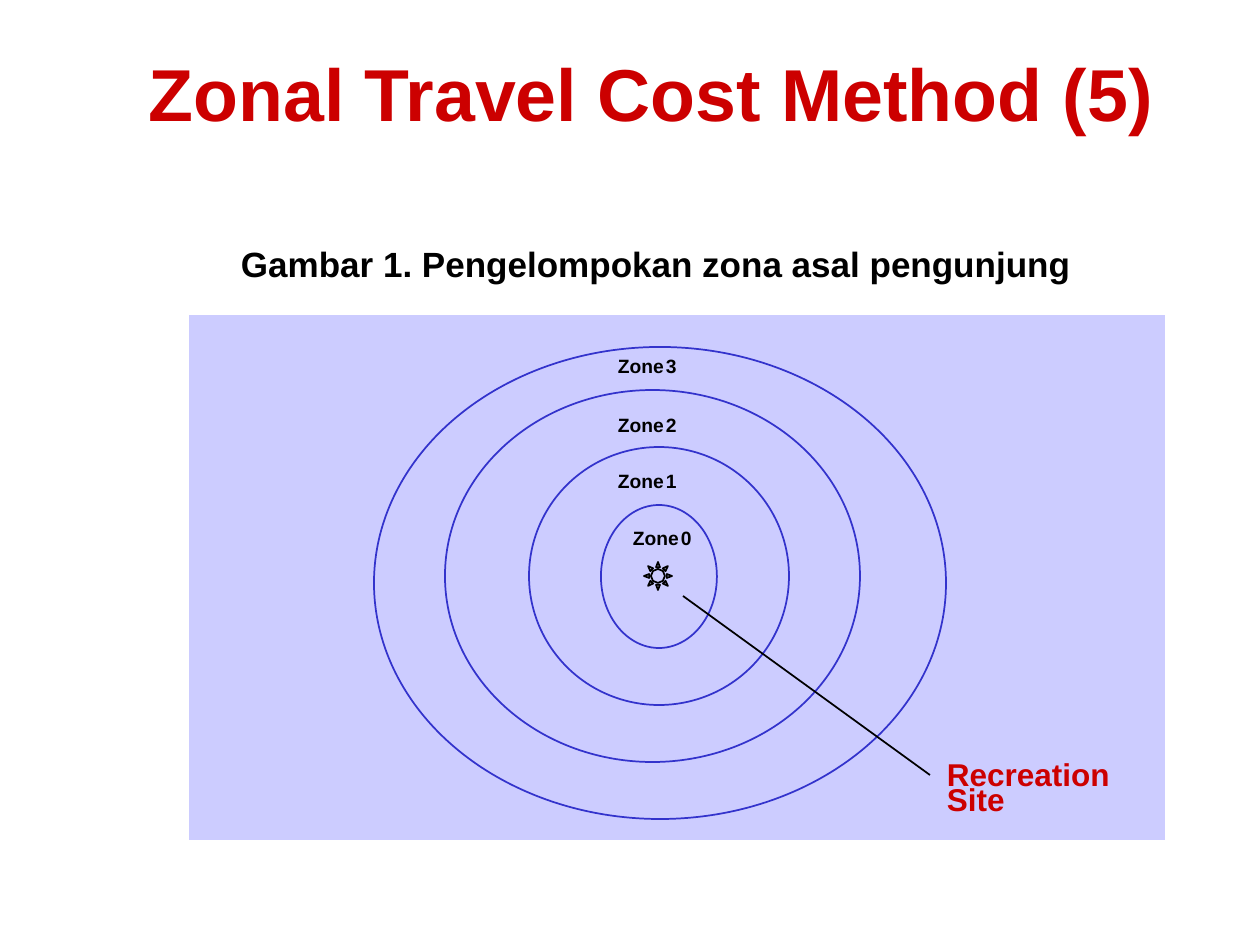
from math import cos, pi, sin
from typing import NamedTuple

from lxml import etree
from pptx import Presentation
from pptx.dml.color import RGBColor as Rgb
from pptx.enum.shapes import MSO_CONNECTOR as Conn, MSO_SHAPE as Geo
from pptx.enum.text import MSO_ANCHOR as Anchor, PP_ALIGN as Align
from pptx.oxml.ns import qn
from pptx.util import Emu, Pt

PX = 914400 / 126
RED, BLACK, BLUE, LILAC = "CC0000", "000000", "3333CC", "CCCCFF"


class Box(NamedTuple):
    x: int
    y: int
    w: int
    h: int


class Label(NamedTuple):
    text: str
    box: Box
    size: int
    color: str
    align: Align = Align.LEFT
    top: int = 0


class Zone(NamedTuple):
    name: str
    x: int
    y: int


def px(n: float) -> Emu:
    return Emu(round(n * PX))


def rgb(code: str) -> Rgb:
    return Rgb.from_string(code)


def stroke(shape, code: str) -> None:
    shape.line.color.rgb = rgb(code)
    shape.line.width = Pt(1)


def panel(shapes, box: Box, code: str) -> None:
    shape = shapes.add_shape(Geo.RECTANGLE, *map(px, box))
    shape.shadow.inherit = False
    shape.fill.solid()
    shape.fill.fore_color.rgb = rgb(code)
    shape.line.fill.background()


def ring(shapes, box: Box) -> None:
    shape = shapes.add_shape(Geo.OVAL, *map(px, box))
    shape.shadow.inherit = False
    shape.fill.background()
    stroke(shape, BLUE)


def write(shapes, label: Label) -> None:
    frame = shapes.add_textbox(*map(px, label.box)).text_frame
    frame.margin_left = frame.margin_right = frame.margin_bottom = 0
    frame.margin_top = px(label.top)
    frame.vertical_anchor = Anchor.TOP
    frame.word_wrap = False
    para = frame.paragraphs[0]
    para.text = label.text
    para.alignment = label.align
    font = para.font
    font.name, font.size, font.bold = "Arial", Pt(label.size), True
    font.color.rgb = rgb(label.color)


def polar(x: int, y: int, r: float, turn: float) -> tuple[int, int]:
    return px(x + r * cos(turn)), px(y + r * sin(turn))


def outline(shapes, points: list[tuple[int, int]]) -> None:
    pen = shapes.build_freeform(*points[0])
    pen.add_line_segments(points[1:], close=True)
    shape = pen.convert_to_shape()
    shape.shadow.inherit = False
    shape.fill.background()
    stroke(shape, BLACK)


def sun(shapes, x: int, y: int) -> None:
    turns = [i * pi / 4 for i in range(8)]
    for turn in turns:
        outline(shapes, [polar(x, y, 14, turn),
                         polar(x, y, 9, turn - 0.22),
                         polar(x, y, 9, turn + 0.22)])
    outline(shapes, [polar(x, y, 7, turn) for turn in turns])


def rule(shapes, x1: int, y1: int, x2: int, y2: int) -> None:
    line = shapes.add_connector(Conn.STRAIGHT, *map(px, (x1, y1, x2, y2)))
    stroke(line, BLACK)
    etree.SubElement(line._element.spPr, qn("a:effectLst"))


RINGS = [
    Box(601, 505, 116, 143),
    Box(445, 390, 415, 372),
    Box(529, 447, 260, 258),
    Box(374, 347, 572, 472),
]
ZONES = [
    Zone("0", 633, 526),
    Zone("1", 618, 469),
    Zone("2", 618, 413),
    Zone("3", 618, 354),
]
HEADS = [
    Label("Zonal Travel Cost Method (5)", Box(84, 42, 1134, 92), 42, RED, Align.CENTER, 6),
    Label("Gambar 1. Pengelompokan zona asal pengunjung", Box(241, 242, 860, 41), 20, BLACK),
]
SITE = [
    Label("Recreation", Box(947, 755, 166, 38), 18, RED),
    Label("Site", Box(947, 780, 62, 38), 18, RED),
]


def main() -> None:
    deck = Presentation()
    deck.slide_width, deck.slide_height = px(1260), px(945)
    shapes = deck.slides.add_slide(deck.slide_layouts[6]).shapes
    panel(shapes, Box(189, 315, 976, 525), LILAC)
    for head in HEADS:
        write(shapes, head)
    for box in RINGS:
        ring(shapes, box)
    sun(shapes, 658, 576)
    for zone in ZONES:
        write(shapes, Label("Zone", Box(zone.x, zone.y, 48, 23), 11, BLACK))
        write(shapes, Label(zone.name, Box(zone.x + 48, zone.y, 12, 23), 11, BLACK))
    rule(shapes, 930, 775, 683, 596)
    for label in SITE:
        write(shapes, label)
    deck.save("out.pptx")


if __name__ == "__main__":
    main()
